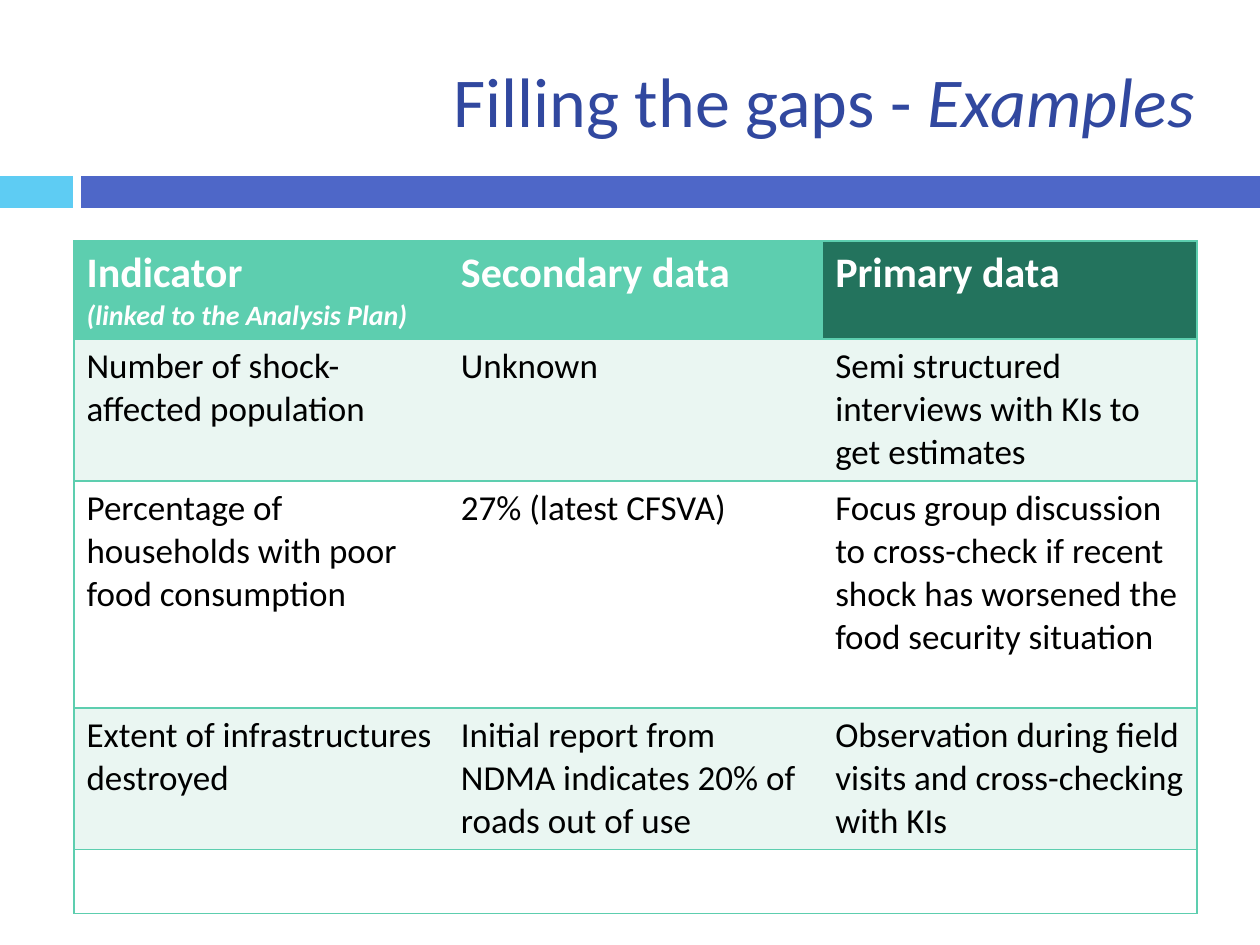
from dataclasses import dataclass

from lxml.etree import SubElement
from pptx import Presentation
from pptx.dml.color import RGBColor
from pptx.enum.shapes import MSO_SHAPE
from pptx.enum.text import MSO_ANCHOR, PP_ALIGN
from pptx.oxml.ns import qn
from pptx.util import Pt

EMU_PER_PX = 914400 / 126
NO_TABLE_STYLE = "{2D5ABB26-0587-4C30-8999-92F81FD0307C}"


@dataclass(frozen=True)
class Theme:
    font: str = "Calibri"
    title: str = "31489F"
    accent: str = "5ECCF3"
    bar: str = "4E67C8"
    header: str = "5DCEAF"
    header_dark: str = "23735D"
    band: str = "EAF6F2"
    white: str = "FFFFFF"
    black: str = "000000"
    title_size: int = 40
    header_size: int = 24
    note_size: int = 16
    body_size: int = 20


THEME = Theme()

ROWS = [
    ["Indicator\n(linked to the Analysis Plan)", "Secondary data", "Primary data"],
    ["Number of shock-affected population", "Unknown",
     "Semi structured interviews with KIs to get estimates"],
    ["Percentage of households with poor food consumption", "27% (latest CFSVA)",
     "Focus group discussion to cross-check if recent shock has worsened "
     "the food security situation"],
    ["Extent of infrastructures destroyed",
     "Initial report from NDMA indicates 20% of roads out of use",
     "Observation during field visits and cross-checking with KIs"],
    ["", "", ""],
]
ROW_HEIGHTS = [98, 142, 227, 141, 64]


def px(length):
    return round(length * EMU_PER_PX)


def style_span(span, size, color, bold=False, italic=False):
    span.font.name = THEME.font
    span.font.size = Pt(size)
    span.font.color.rgb = RGBColor.from_string(color)
    span.font.bold = bold
    span.font.italic = italic


def add_title(page, box):
    title = page.shapes.title
    title.left, title.top, title.width, title.height = map(px, box)
    frame = title.text_frame
    frame.word_wrap = True
    frame.vertical_anchor = MSO_ANCHOR.MIDDLE
    para = frame.paragraphs[0]
    para.alignment = PP_ALIGN.RIGHT
    for text, italic in (("Filling the gaps - ", False), ("Examples", True)):
        span = para.add_run()
        span.text = text
        style_span(span, THEME.title_size, THEME.title, italic=italic)


def add_divider(page, box, accent_width, gap):
    left, top, width, height = box
    bar_offset = accent_width + gap
    for offset, length, color in ((0, accent_width, THEME.accent),
                                  (bar_offset, width - bar_offset, THEME.bar)):
        bar = page.shapes.add_shape(MSO_SHAPE.RECTANGLE, px(left + offset),
                                    px(top), px(length), px(height))
        bar.shadow.inherit = False
        bar.fill.solid()
        bar.fill.fore_color.rgb = RGBColor.from_string(color)
        bar.line.fill.background()


def add_borders(cell, sides):
    properties = cell._tc.get_or_add_tcPr()
    for side in sides:
        line = SubElement(properties, qn(f"a:ln{side}"), w=str(Pt(1)))
        fill = SubElement(line, qn("a:solidFill"))
        SubElement(fill, qn("a:srgbClr"), val=THEME.header)


def cell_fill(row, column):
    if row == 0:
        return THEME.header_dark if column == 2 else THEME.header
    return THEME.band if row % 2 else THEME.white


def fill_cell(cell, text, row, column):
    # Borders must come before the fill in the cell properties.
    add_borders(cell, {0: "LTB", 2: "RTB"}.get(column, "TB"))
    cell.fill.solid()
    cell.fill.fore_color.rgb = RGBColor.from_string(cell_fill(row, column))
    cell.text_frame.text = text
    for index, para in enumerate(cell.text_frame.paragraphs):
        for span in para.runs:
            if row:
                style_span(span, THEME.body_size, THEME.black)
            else:
                size = THEME.note_size if index else THEME.header_size
                style_span(span, size, THEME.white, bold=True, italic=index > 0)


def add_indicator_table(page, box):
    frame = page.shapes.add_table(len(ROWS), len(ROWS[0]), *map(px, box))
    table = frame.table
    table._tbl.tblPr.find(qn("a:tableStyleId")).text = NO_TABLE_STYLE
    for column in table.columns:
        column.width = px(box[2] / len(ROWS[0]))
    for row, (texts, height) in enumerate(zip(ROWS, ROW_HEIGHTS)):
        table.rows[row].height = px(height)
        for column, text in enumerate(texts):
            fill_cell(table.cell(row, column), text, row, column)


def main():
    deck = Presentation()
    deck.slide_width, deck.slide_height = px(1260), px(945)
    page = deck.slides.add_slide(deck.slide_layouts[5])
    add_divider(page, (0, 176, 1260, 32), accent_width=73, gap=8)
    add_title(page, (84, 32, 1123, 136))
    add_indicator_table(page, (74, 241, 1123, sum(ROW_HEIGHTS)))
    deck.save("out.pptx")


if __name__ == "__main__":
    main()
